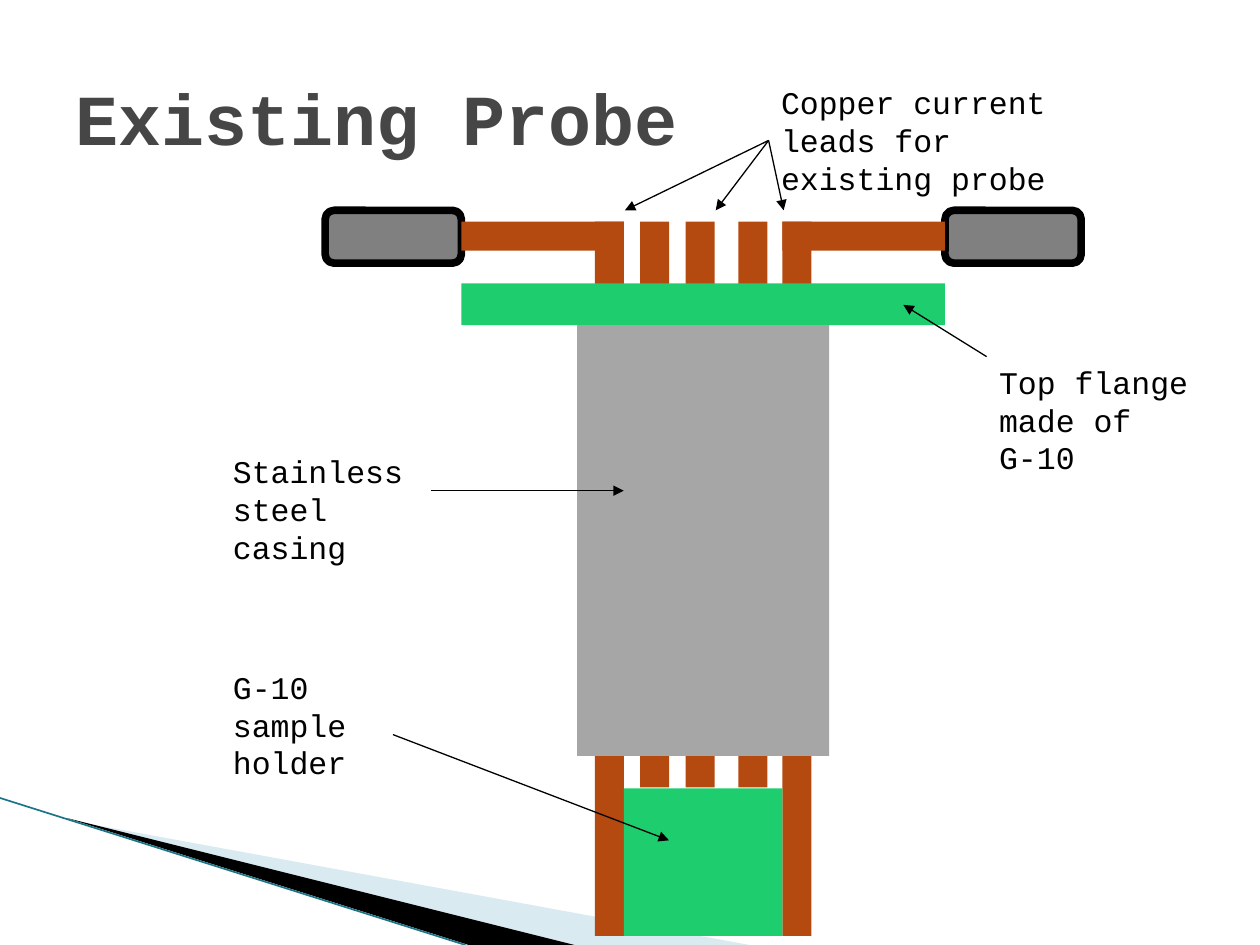
from lxml import etree
from pptx import Presentation
from pptx.dml.color import RGBColor
from pptx.enum.shapes import MSO_CONNECTOR, MSO_SHAPE
from pptx.enum.text import MSO_ANCHOR
from pptx.oxml import parse_xml
from pptx.oxml.ns import nsdecls, qn
from pptx.util import Pt

BLACK = RGBColor(0x00, 0x00, 0x00)
TITLE_GREY = RGBColor(0x46, 0x46, 0x46)
TERMINAL = RGBColor(0x80, 0x80, 0x80)
STEEL = RGBColor(0xA6, 0xA6, 0xA6)
COPPER = RGBColor(0xB5, 0x4A, 0x10)
G10 = RGBColor(0x1E, 0xCE, 0x6E)
PALE_BLUE = RGBColor(0xA0, 0xCB, 0xDC)
TEAL = RGBColor(0x1B, 0x75, 0x87)

TITLE_FONT = {"name": "Courier New", "size": Pt(41), "bold": True}
LABEL_FONT = {"name": "Courier New", "size": Pt(18), "bold": False}
LEFT, RIGHT = 1, 3


def paint(sp, fill, line=None, width=0):
    """Give a shape a flat fill and an optional outline."""
    sp.shadow.inherit = False
    sp.fill.solid()
    sp.fill.fore_color.rgb = fill
    if line is None:
        sp.line.fill.background()
    else:
        sp.line.color.rgb = line
        sp.line.width = Pt(width)


def add_block(s, x, y, w, h, fill, kind=MSO_SHAPE.RECTANGLE, **outline):
    """Add a filled preset shape."""
    sp = s.shapes.add_shape(kind, Pt(x), Pt(y), Pt(w), Pt(h))
    paint(sp, fill, **outline)
    return sp


def add_wedge(s, points, fill):
    """Add a filled polygon."""
    builder = s.shapes.build_freeform(Pt(points[0][0]), Pt(points[0][1]))
    builder.add_line_segments([(Pt(x), Pt(y)) for x, y in points[1:]])
    sp = builder.convert_to_shape()
    paint(sp, fill)
    return sp


def add_line(s, start, end, color, width, arrow=False):
    """Add a straight line, with an arrowhead at its end if asked."""
    points = [Pt(v) for v in (*start, *end)]
    line = s.shapes.add_connector(MSO_CONNECTOR.STRAIGHT, *points)
    line.line.color.rgb = color
    line.line.width = Pt(width)
    if arrow:
        line.line._get_or_add_ln().append(
            parse_xml(f'<a:tailEnd {nsdecls("a")} type="triangle"/>'))
    etree.SubElement(line._element.spPr, qn("a:effectLst"))
    return line


def add_text(s, box, text, font, color, anchor=MSO_ANCHOR.TOP):
    """Add a wrapped text box."""
    sp = s.shapes.add_textbox(*[Pt(v) for v in box])
    tf = sp.text_frame
    tf.word_wrap = True
    tf.vertical_anchor = anchor
    r = tf.paragraphs[0].add_run()
    r.text = text
    for key, value in font.items():
        setattr(r.font, key, value)
    r.font.color.rgb = color
    return sp


def add_corner(s, x, y, w, h):
    """Draw the wedges and the line in the bottom left corner."""
    bottom = y + h
    pale = add_wedge(s, [(x + 39.6, y + 12.7), (x + w, bottom),
                         (x + 328.3, bottom)], PALE_BLUE)
    color = pale.fill._xPr.find(qn("a:solidFill"))[0]
    etree.SubElement(color, qn("a:alpha"), val="40000")
    add_wedge(s, [(x + 38.2, y + 11.5), (x + 328.3, bottom),
                  (x + 267.8, bottom)], BLACK)
    add_line(s, (x, y), (x + 266, bottom), TEAL, 0.95)


def add_lead(s, center, top, length, thick):
    """Draw one vertical copper lead."""
    bar = add_block(s, center - length / 2, top + (length - thick) / 2,
                    length, thick, COPPER)
    bar.rotation = 90


def add_probe(s, x, y, w, h):
    """Draw the probe, symmetric about the middle of its box."""
    thick, term_w, arm_w = 16.6, 77.8, 92.9
    lead_top = y + 6.5
    lead_x = term_w + arm_w - thick / 2
    for term_x, arm_x, center in (
            (0, term_w, lead_x),
            (w - term_w, w - term_w - arm_w, w - lead_x)):
        add_block(s, x + term_x, y, term_w, 30.2, TERMINAL,
                  MSO_SHAPE.ROUNDED_RECTANGLE, line=BLACK, width=4.33)
        add_block(s, x + arm_x, lead_top, arm_w, thick, COPPER)
        add_lead(s, x + center, lead_top, h - 6.5, thick)
    holder_x = term_w + arm_w
    add_block(s, x + holder_x, y + h - 84.2, w - 2 * holder_x, 84.2, G10)
    for center in (188.2, 214.2, 244.4):
        add_lead(s, x + center, lead_top, 323.3, thick)
    add_block(s, x + term_w, y + 41.8, w - 2 * term_w, 23.8, G10)
    add_block(s, x + w / 3, y + 65.6, w / 3, 246.2, STEEL)


def add_callout(s, box, text, targets, start, site=None):
    """Place a label and arrows that run from it to the targets."""
    label = add_text(s, box, text, LABEL_FONT, BLACK)
    origin = (box[0] + start[0], box[1] + start[1])
    for target in targets:
        arrow = add_line(s, origin, target, BLACK, 0.75, arrow=True)
        if site is not None:
            arrow.begin_connect(label, site)


def main():
    """Build the slide and save it."""
    prs = Presentation()
    prs.slide_width, prs.slide_height = Pt(720), Pt(540)
    s = prs.slides.add_slide(prs.slide_layouts[6])
    add_corner(s, 0, 456, 428.4, 84)
    add_text(s, (36, 21.6, 648, 90), "Existing Probe", TITLE_FONT,
             TITLE_GREY, MSO_ANCHOR.MIDDLE)
    add_probe(s, 185.8, 120.2, 432, 414.6)
    add_callout(s, (439.2, 43.9, 181.4, 72.7),
                "Copper current leads for existing probe",
                [(357.1, 120.2), (409, 120.2), (447.8, 120.2)],
                (0, 36.35), LEFT)
    add_callout(s, (563.8, 203.8, 138.2, 51), "Top flange made of G-10",
                [(516.2, 174.2)], (0, 0))
    add_callout(s, (126, 254.9, 120.2, 51), "Stainless steel casing",
                [(356.4, 280.4)], (120.2, 25.5), RIGHT)
    add_callout(s, (126, 378, 120.2, 72.7), "G-10 sample holder",
                [(382.3, 480.2)], (98.6, 41.8))
    prs.save("out.pptx")


if __name__ == "__main__":
    main()
